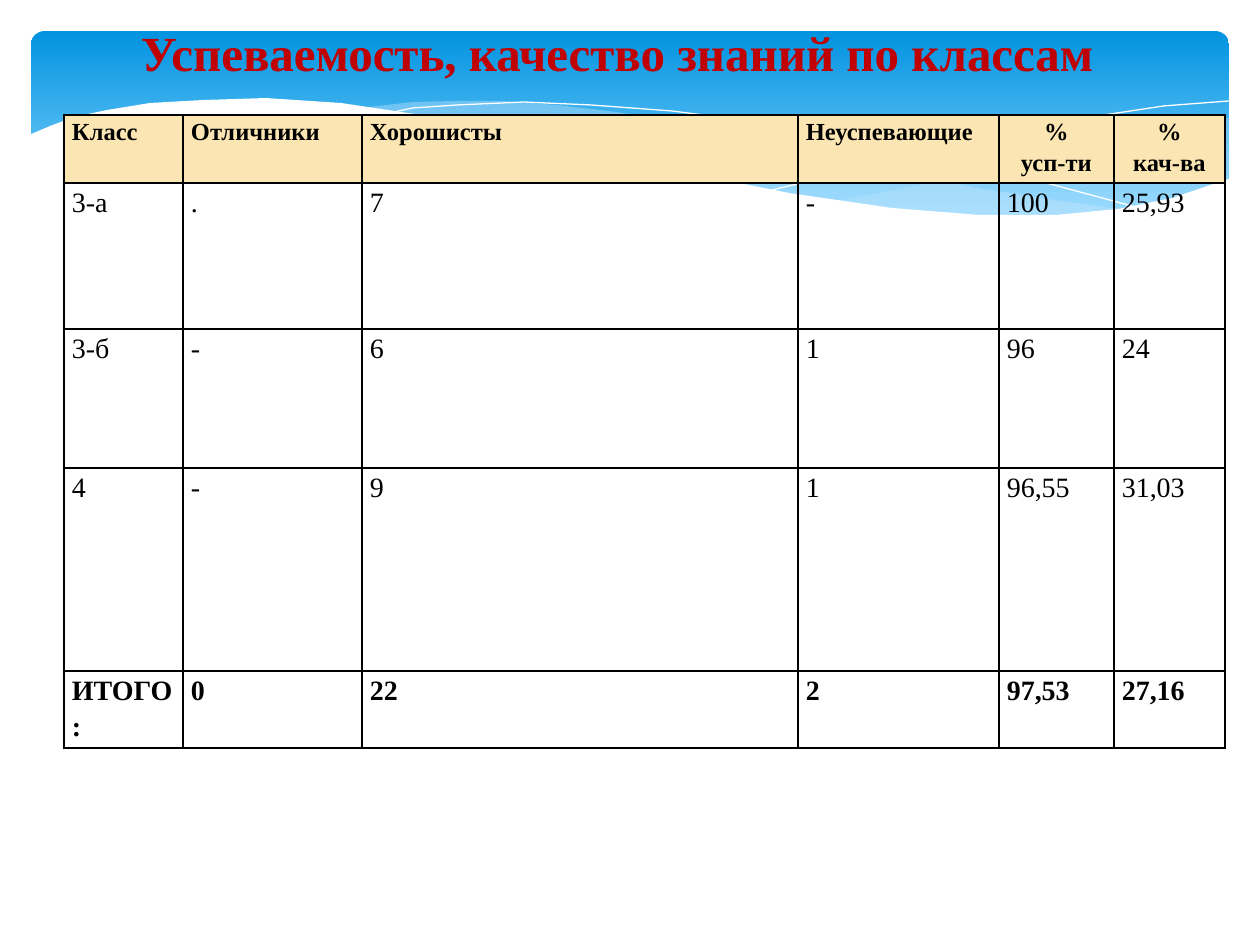
from lxml.etree import SubElement
from pptx import Presentation
from pptx.dml.color import RGBColor
from pptx.enum.shapes import MSO_SHAPE
from pptx.enum.text import MSO_ANCHOR, PP_ALIGN
from pptx.oxml.ns import qn
from pptx.util import Pt

SCALE = 914400 / 126
FONT = "Times New Roman"
COLORS = {
    "sky": "0293E0",
    "light_sky": "83D3FE",
    "wave": "C6E7FC",
    "white": "FFFFFF",
    "title": "C00000",
    "header": "FBE6B3",
    "black": "000000",
}


def px(*lengths):
    return [round(length * SCALE) for length in lengths]


def style_run(run, size, color, bold):
    run.font.name = FONT
    run.font.size = Pt(size)
    run.font.bold = bold
    run.font.color.rgb = RGBColor.from_string(COLORS[color])


prs = Presentation()
prs.slide_width, prs.slide_height = px(1260, 945)
slide = prs.slides.add_slide(prs.slide_layouts[5])
shapes = slide.shapes

banner = shapes.add_shape(MSO_SHAPE.ROUNDED_RECTANGLE, *px(31, 31, 1198, 197))
banner.adjustments[0] = 0.07
banner.shadow.inherit = False
banner.line.fill.background()
banner.fill.gradient()
banner.fill.gradient_angle = 270
for stop, color, position in zip(banner.fill.gradient_stops, ("sky", "light_sky"), (0, 0.9)):
    stop.color.rgb = RGBColor.from_string(COLORS[color])
    stop.position = position

right_wave = [
    (1229, 118), (1194, 125), (1142, 135), (1085, 149), (982, 173), (919, 185),
    (833, 202), (888, 208), (954, 214), (1012, 217), (1076, 214), (1130, 208),
    (1178, 197), (1230, 178), (1230, 118),
]
middle_wave = [
    (1125, 210), (1055, 200), (977, 188), (890, 169), (793, 146), (736, 134),
    (682, 122), (616, 112), (557, 105), (503, 101), (455, 101), (413, 102),
    (360, 108), (431, 118), (509, 133), (566, 146), (668, 170), (757, 189),
    (838, 203), (910, 212), (974, 216), (1030, 218), (1080, 217),
]
falling_line = [
    (389, 113), (413, 108), (457, 105), (524, 102), (591, 105), (672, 111),
    (766, 123), (876, 144), (1002, 171), (1143, 209),
]
rising_line = [
    (772, 190), (823, 178), (907, 156), (1016, 131), (1091, 117), (1164, 106),
    (1229, 101),
]
white_wave = [
    (1231, 178), (1172, 198), (1118, 209), (1055, 215), (980, 215), (892, 208),
    (789, 193), (699, 175), (634, 161), (563, 144), (493, 129), (428, 116),
    (341, 103), (266, 98), (203, 100), (150, 103), (107, 110), (74, 117),
    (50, 126), (29, 135), (29, 282), (1231, 282),
]
for points, color, opacity in [
    (right_wave, "wave", 29),
    (middle_wave, "wave", 40),
    (falling_line, None, None),
    (rising_line, None, None),
    (white_wave, "white", 100),
]:
    builder = shapes.build_freeform(*points[0], scale=SCALE)
    builder.add_line_segments(points[1:], close=color is not None)
    curve = builder.convert_to_shape()
    curve.shadow.inherit = False
    if color is None:
        curve.fill.background()
        curve.line.color.rgb = RGBColor.from_string(COLORS["white"])
        curve.line.width = Pt(0)
    else:
        curve.line.fill.background()
        curve.fill.solid()
        curve.fill.fore_color.rgb = RGBColor.from_string(COLORS[color])
        if opacity < 100:
            tint = curve.fill._xPr.find(qn("a:solidFill"))[0]
            SubElement(tint, qn("a:alpha"), val=str(opacity * 1000))

heading = shapes.title
heading.left, heading.top, heading.width, heading.height = px(123, 16, 988, 72)
heading.text_frame.word_wrap = False
heading.text_frame.vertical_anchor = MSO_ANCHOR.MIDDLE
heading_line = heading.text_frame.paragraphs[0]
heading_line.alignment = PP_ALIGN.CENTER
heading_run = heading_line.add_run()
heading_run.text = "Успеваемость, качество знаний по классам"
style_run(heading_run, 28, "title", True)
shapes._spTree.append(heading._element)

column_widths = [119, 179, 436, 201, 115, 111]
row_heights = [68, 146, 139, 203, 77]
results = [
    ["Класс", "Отличники", "Хорошисты", "Неуспевающие", "%\nусп-ти", "%\nкач-ва"],
    ["3-а", ".", "7", "-", "100", "25,93"],
    ["3-б", "-", "6", "1", "96", "24"],
    ["4", "-", "9", "1", "96,55", "31,03"],
    ["ИТОГО:", "0", "22", "2", "97,53", "27,16"],
]
grid = shapes.add_table(
    len(results), len(column_widths), *px(64, 115, sum(column_widths), sum(row_heights))
).table
grid.horz_banding = False
for column, width in zip(grid.columns, px(*column_widths)):
    column.width = width
for row, height in zip(grid.rows, px(*row_heights)):
    row.height = height

for r, values in enumerate(results):
    is_header = r == 0
    is_total = r == len(results) - 1
    for c, value in enumerate(values):
        cell = grid.cell(r, c)
        cell.margin_left, cell.margin_right, cell.margin_top, cell.margin_bottom = px(8, 8, 0, 0)
        for side in ("a:lnL", "a:lnR", "a:lnT", "a:lnB"):
            border = SubElement(cell._tc.get_or_add_tcPr(), qn(side), w=str(Pt(1)))
            SubElement(SubElement(border, qn("a:solidFill")), qn("a:srgbClr"), val=COLORS["black"])
        if is_header:
            cell.fill.solid()
            cell.fill.fore_color.rgb = RGBColor.from_string(COLORS["header"])
        else:
            cell.fill.background()
        for i, words in enumerate(value.split("\n")):
            frame = cell.text_frame
            line = frame.add_paragraph() if i else frame.paragraphs[0]
            line.line_spacing = 1.15
            line.alignment = PP_ALIGN.CENTER if is_header and c >= 4 else PP_ALIGN.LEFT
            run = line.add_run()
            run.text = words
            style_run(run, 14 if is_header else 16, "black", is_header or is_total)

prs.save("out.pptx")
